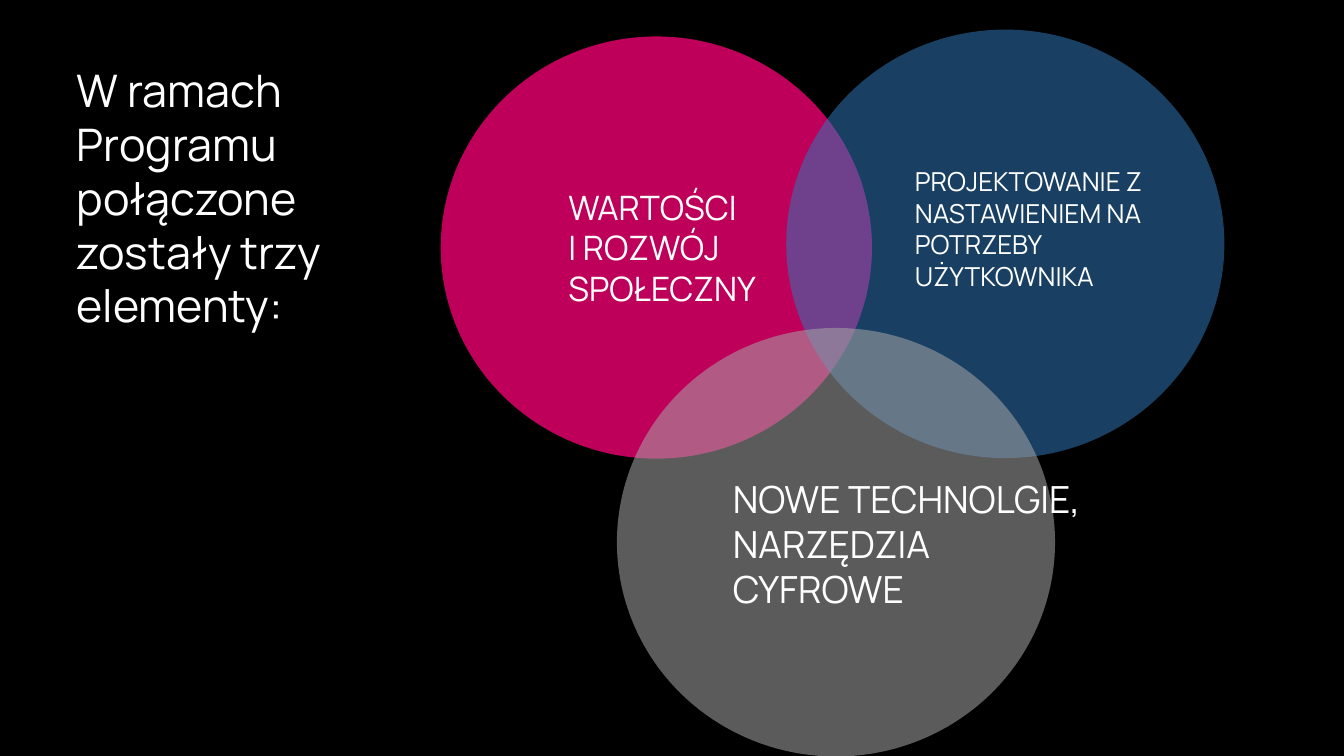
import pptx
import pptx.dml.color
import pptx.enum.shapes
import pptx.enum.text
import pptx.oxml
import pptx.oxml.ns
import pptx.util

Cm = pptx.util.Cm

THEME = {
    "font": "Manrope",
    "background": "000000",
    "text": "FFFFFF",
    "pink": "BF005B",
    "blue": "2E75B6",
    "grey": "A6A6A6",
    "title": 24,
    "large": 20,
    "medium": 18,
    "small": 14,
}

# Content: boxes are left, top, width, height in cm
# Insets are left, top, right, bottom in cm
CIRCLE_INSETS = (1.22, 0.13, 0.25, 0.13)
LIFTED_INSETS = (1.22, 0.13, 0.25, 0.71)
BOX_INSETS = (0.18, 0.1, 0.18, 0.1)
LOWERED_INSETS = (0.18, 0.95, 0.18, 0.1)

CIRCLES = [
    {"box": (8.33, 0.69, 8.15, 7.98), "color": "pink", "alpha": 100,
     "lines": ["WARTOŚCI", "I ROZWÓJ", "SPOŁECZNY"],
     "size": "medium", "insets": CIRCLE_INSETS},
    {"box": (14.86, 0.56, 8.28, 8.1), "color": "blue", "alpha": 55,
     "lines": ["PROJEKTOWANIE Z NASTAWIENIEM NA POTRZEBY UŻYTKOWNIKA"],
     "size": "small", "insets": LIFTED_INSETS},
    {"box": (11.66, 6.2, 8.28, 8.1), "color": "grey", "alpha": 55},
]

TEXT_BOXES = [
    {"box": (13.67, 7.62, 7.09, 4.47), "size": "large", "insets": LOWERED_INSETS,
     "lines": ["NOWE TECHNOLGIE, NARZĘDZIA CYFROWE"]},
    {"box": (1.27, 1.07, 6.25, 5.33), "size": "title", "insets": BOX_INSETS,
     "lines": ["W ramach Programu połączone zostały trzy elementy:"]},
]


def rgb(name):
    return pptx.dml.color.RGBColor.from_string(THEME[name])


def write(sp, lines, *, size, insets, color="text"):
    tf = sp.text_frame
    tf.word_wrap = True
    tf.auto_size = pptx.enum.text.MSO_AUTO_SIZE.NONE
    tf.vertical_anchor = pptx.enum.text.MSO_ANCHOR.MIDDLE
    (tf.margin_left, tf.margin_top,
     tf.margin_right, tf.margin_bottom) = map(Cm, insets)
    for i, line in enumerate(lines):
        p = tf.paragraphs[0] if i == 0 else tf.add_paragraph()
        p.alignment = pptx.enum.text.PP_ALIGN.LEFT
        r = p.add_run()
        r.text = line
        r.font.name = THEME["font"]
        r.font.size = pptx.util.Pt(THEME[size])
        r.font.color.rgb = rgb(color)


def add_circle(s, box, color, alpha):
    sp = s.shapes.add_shape(pptx.enum.shapes.MSO_SHAPE.OVAL, *map(Cm, box))
    sp.shadow.inherit = False
    sp.line.fill.background()
    sp.fill.solid()
    sp.fill.fore_color.rgb = rgb(color)
    if alpha < 100:
        clr = sp.fill._xPr.find(".//" + pptx.oxml.ns.qn("a:srgbClr"))
        clr.append(pptx.oxml.parse_xml(
            f'<a:alpha {pptx.oxml.ns.nsdecls("a")} val="{alpha * 1000}"/>'))
    return sp


def main():
    prs = pptx.Presentation()
    prs.slide_width, prs.slide_height = Cm(25.4), Cm(14.29)
    s = prs.slides.add_slide(prs.slide_layouts[6])
    s.background.fill.solid()
    s.background.fill.fore_color.rgb = rgb("background")

    # Overlapping circles
    for c in CIRCLES:
        sp = add_circle(s, c["box"], c["color"], c["alpha"])
        if "lines" in c:
            write(sp, c["lines"], size=c["size"], insets=c["insets"])

    # Label of the lowest circle and the heading
    for t in TEXT_BOXES:
        sp = s.shapes.add_textbox(*map(Cm, t["box"]))
        write(sp, t["lines"], size=t["size"], insets=t["insets"])

    prs.save("out.pptx")


if __name__ == "__main__":
    main()
